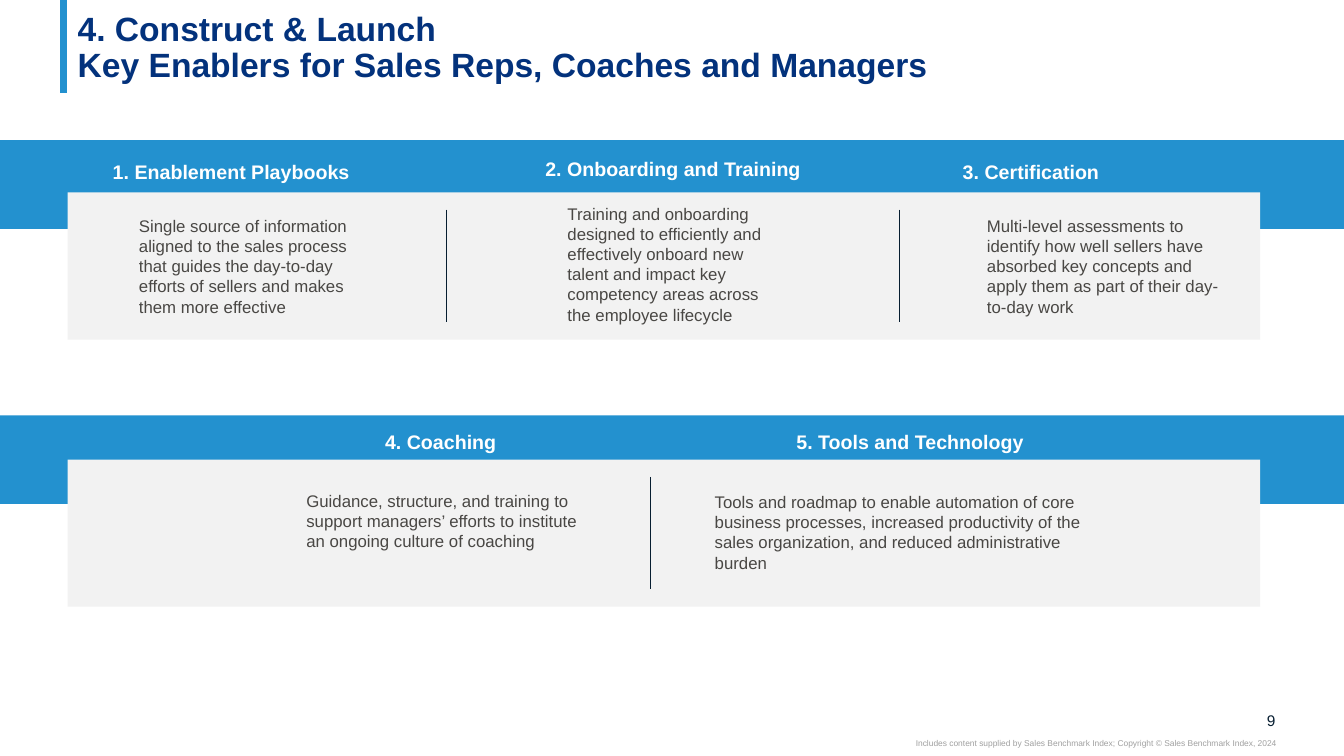
from lxml import etree
from pptx import Presentation
from pptx.dml.color import RGBColor
from pptx.enum import shapes, text
from pptx.oxml import ns
from pptx.util import Inches, Pt

BLUE = RGBColor(0x23, 0x91, 0xCF)
NAVY = RGBColor(0x03, 0x32, 0x7C)
INK = RGBColor(0x07, 0x1E, 0x31)
BODY = RGBColor(0x49, 0x47, 0x44)
PANEL = RGBColor(0xF2, 0xF2, 0xF2)
PALE = RGBColor(0xA0, 0xA0, 0xA0)
WHITE = RGBColor(0xFF, 0xFF, 0xFF)

FONT = "Arial"
SLIDE_WIDTH, SLIDE_HEIGHT = 13.33, 7.5
HEADING_HEIGHT = 0.34
DIVIDER_HEIGHT = 1.11

# Each row: band top, panel top, divider positions
ROWS = [
    (1.39, 1.91, [4.43, 8.92]),
    (4.12, 4.56, [6.45]),
]

# Each enabler: heading, its left, top, width; description, its left, top, width, height
ENABLERS = [
    ("1. Enablement Playbooks", (1.02, 1.54, 2.7),
     "Single source of information aligned to the sales process that guides "
     "the day-to-day efforts of sellers and makes them more effective",
     (1.28, 2.09, 2.43, 1.11)),
    ("2. Onboarding and Training", (5.31, 1.51, 2.95),
     "Training and onboarding designed to efficiently and effectively onboard new "
     "talent and impact key competency areas across the employee lifecycle",
     (5.53, 1.97, 2.28, 1.31)),
    ("3. Certification", (9.45, 1.54, 1.79),
     "Multi-level assessments to identify how well sellers have absorbed key "
     "concepts and apply them as part of their day-to-day work",
     (9.69, 2.09, 2.59, 1.11)),
    ("4. Coaching", (3.72, 4.22, 1.38),
     "Guidance, structure, and training to support managers’ efforts to "
     "institute an ongoing culture of coaching",
     (2.94, 4.82, 2.93, 0.91)),
    ("5. Tools and Technology", (7.8, 4.22, 2.55),
     "Tools and roadmap to enable automation of core business processes, increased "
     "productivity of the sales organization, and reduced administrative burden",
     (6.99, 4.83, 4.01, 0.91)),
]


def add_span(para, words, size, color, bold=False):
    span = para.add_run()
    span.text = words
    span.font.name = FONT
    span.font.size = Pt(size)
    span.font.bold = bold
    span.font.color.rgb = color


def set_margins(frame, side, top, bottom):
    frame.margin_left = frame.margin_right = Inches(side)
    frame.margin_top, frame.margin_bottom = Inches(top), Inches(bottom)


def add_text(page, place, words, size, color, bold=False):
    box = page.shapes.add_textbox(*map(Inches, place))
    box.text_frame.word_wrap = True
    add_span(box.text_frame.paragraphs[0], words, size, color, bold)
    return box.text_frame


def add_footer(page, place, words, size, color):
    frame = add_text(page, place, words, size, color)
    set_margins(frame, 0, 0, 0)
    frame.paragraphs[0].alignment = text.PP_ALIGN.RIGHT
    return frame


def add_block(page, place, color):
    block = page.shapes.add_shape(shapes.MSO_SHAPE.RECTANGLE, *map(Inches, place))
    block.shadow.inherit = False
    block.fill.solid()
    block.fill.fore_color.rgb = color
    block.line.fill.background()


def add_vertical(page, left, top, height, color, width):
    line = page.shapes.add_connector(
        shapes.MSO_CONNECTOR.STRAIGHT,
        Inches(left), Inches(top), Inches(left), Inches(top + height))
    line.line.color.rgb = color
    line.line.width = Pt(width)
    etree.SubElement(line._element.spPr, ns.qn("a:effectLst"))


def set_title(page, lines):
    title = page.shapes.title
    title.left, title.top = Inches(0.67), Inches(0.36)
    title.width, title.height = Inches(11.99), Inches(0.84)
    frame = title.text_frame
    frame.word_wrap = True
    frame.auto_size = text.MSO_AUTO_SIZE.NONE
    frame.vertical_anchor = text.MSO_ANCHOR.BOTTOM
    set_margins(frame, 0.1, 0, 0.36)
    para = frame.paragraphs[0]
    para.alignment = text.PP_ALIGN.LEFT
    para.line_spacing = 0.9
    for index, words in enumerate(lines):
        if index:
            para.add_line_break()
        add_span(para, words, 24, NAVY, bold=True)


def main():
    deck = Presentation()
    deck.slide_width, deck.slide_height = Inches(SLIDE_WIDTH), Inches(SLIDE_HEIGHT)
    page = deck.slides.add_slide(deck.slide_layouts[5])

    # Title with accent bar
    add_vertical(page, 0.63, 0, 0.92, BLUE, 5)
    set_title(page, ["4. Construct & Launch",
                     "Key Enablers for Sales Reps, Coaches and Managers"])

    # Bands, panels and dividers
    for band_top, panel_top, dividers in ROWS:
        add_block(page, (-0.02, band_top, 13.35, 0.88), BLUE)
        add_block(page, (0.67, panel_top, 11.83, 1.46), PANEL)
        for left in dividers:
            add_vertical(page, left, panel_top + 0.17, DIVIDER_HEIGHT, INK, 0.5)

    # Enabler headings and descriptions
    for heading, heading_place, description, description_place in ENABLERS:
        add_text(page, (*heading_place, HEADING_HEIGHT), heading, 14, WHITE, bold=True)
        add_text(page, description_place, description, 12, BODY)

    # Page number and copyright line
    number = add_footer(page, (12.32, 7.05, 0.33, 0.19), "9", 11, INK)
    number.vertical_anchor = text.MSO_ANCHOR.MIDDLE
    add_footer(page, (7.5, 7.32, 5.16, 0.1),
               "Includes content supplied by Sales Benchmark Index; "
               "Copyright © Sales Benchmark Index, 2024", 6, PALE)

    deck.save("out.pptx")


if __name__ == "__main__":
    main()
